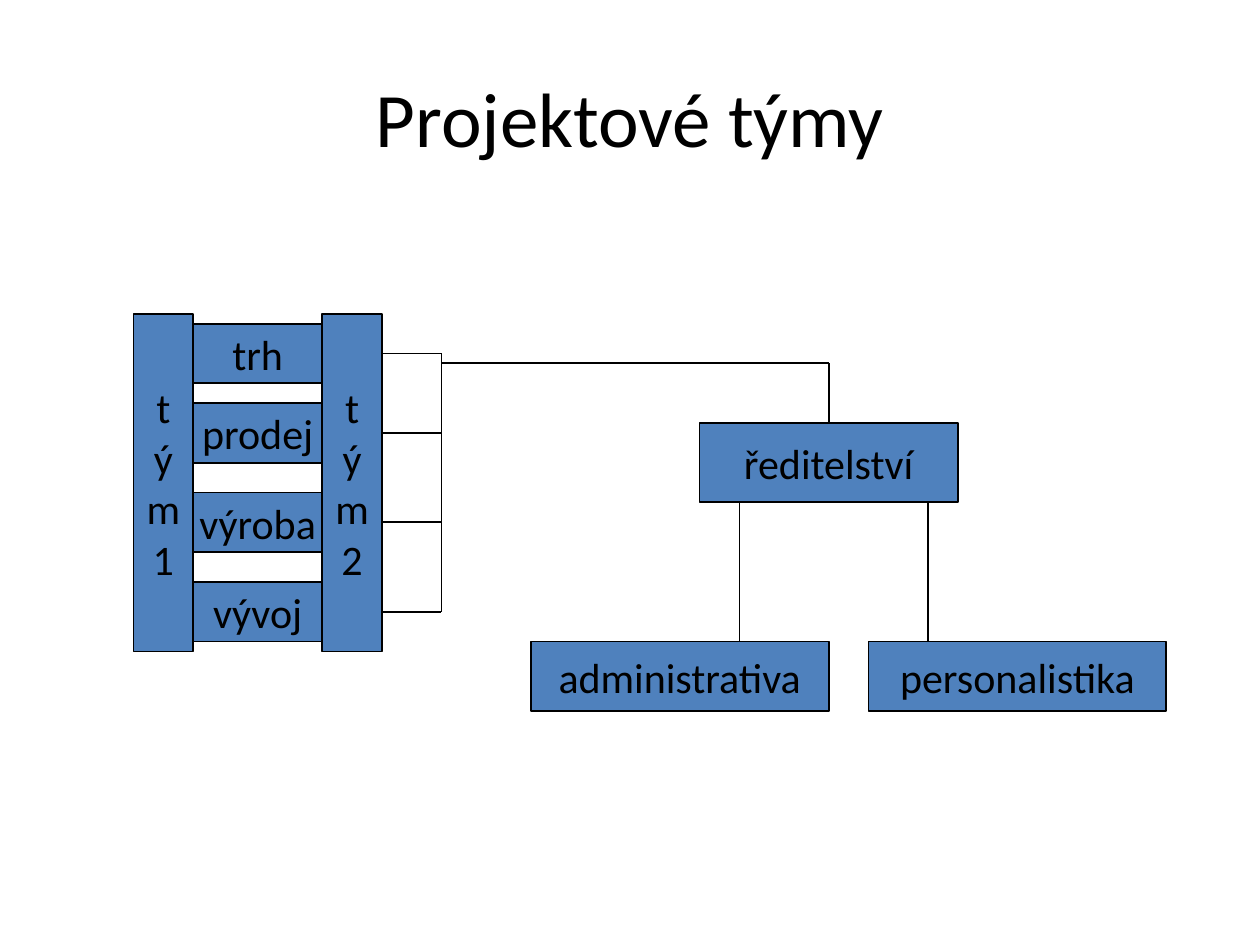
from pptx import Presentation
from pptx.dml.color import RGBColor
from pptx.enum.shapes import MSO_CONNECTOR, MSO_SHAPE
from pptx.enum.text import MSO_ANCHOR, PP_ALIGN
from pptx.oxml.ns import qn
from pptx.util import Inches, Pt
from lxml.etree import SubElement

CELL = 1.34 / 17
LEFT, TOP = 1.06, 2.49


def colour(value):
    return RGBColor.from_string(value)


def column(number):
    return Inches(LEFT + number * CELL)


def row(number):
    return Inches(TOP + number * CELL)


def span_of(cells):
    return Inches(cells * CELL)


def write(frame, lines, size, font, ink, wrap):
    frame.word_wrap = wrap
    frame.vertical_anchor = MSO_ANCHOR.MIDDLE
    for index, line in enumerate(lines):
        para = frame.add_paragraph() if index else frame.paragraphs[0]
        para.alignment = PP_ALIGN.CENTER
        span = para.add_run()
        span.text = line
        span.font.size = Pt(size)
        span.font.name = font
        span.font.color.rgb = colour(ink)


class Chart:
    font = "Calibri"
    ink = "000000"
    fill = "4F81BD"
    title_size = 44
    text_size = 24
    line_width = 1

    def __init__(self, deck):
        self.page = deck.slides.add_slide(deck.slide_layouts[5])

    def title(self, text):
        box = self.page.shapes.title
        box.left, box.top = Inches(0.5), Inches(0.3)
        box.width, box.height = Inches(9), Inches(1.25)
        write(box.text_frame, [text], self.title_size, self.font, self.ink, True)

    def box(self, lines, x, y, width, height):
        box = self.page.shapes.add_shape(
            MSO_SHAPE.RECTANGLE, column(x), row(y), span_of(width), span_of(height))
        box.shadow.inherit = False
        box.fill.solid()
        box.fill.fore_color.rgb = colour(self.fill)
        self.stroke(box.line)
        write(box.text_frame, lines, self.text_size, self.font, self.ink, False)
        return box

    def line(self, start, end, source=None, side=0):
        link = self.page.shapes.add_connector(
            MSO_CONNECTOR.STRAIGHT, column(start[0]), row(start[1]),
            column(end[0]), row(end[1]))
        self.stroke(link.line)
        SubElement(link._element.spPr, qn("a:effectLst"))
        if source is not None:
            link.begin_connect(source, side)

    def stroke(self, line):
        line.color.rgb = colour(self.ink)
        line.width = Pt(self.line_width)


def main():
    deck = Presentation()
    deck.slide_width, deck.slide_height = Inches(10), Inches(7.5)
    chart = Chart(deck)
    chart.title("Projektové týmy")

    trunk, director_middle, bus = 31, 70, 5
    departments = {"trh": 1, "prodej": 9, "výroba": 18, "vývoj": 27}
    for name, y in departments.items():
        department = chart.box([name], 4, y, 17, 6)
        chart.line((21, y + 3), (trunk, y + 3), department, 3)
    chart.line((trunk, 4), (trunk, 30))
    chart.line((trunk, bus), (director_middle, bus))

    director = chart.box(["ředitelství"], 57, 11, 26, 8)
    chart.line((director_middle, 11), (director_middle, bus), director, 0)
    for name, x, drop in (("administrativa", 40, 61), ("personalistika", 74, 80)):
        chart.line((drop, 19), (drop, 33))
        chart.box([name], x, 33, 30, 7)

    for name, x in (("tým1", 0), ("tým2", 19)):
        chart.box(list(name), x, 0, 6, 34)

    deck.save("out.pptx")


if __name__ == "__main__":
    main()
